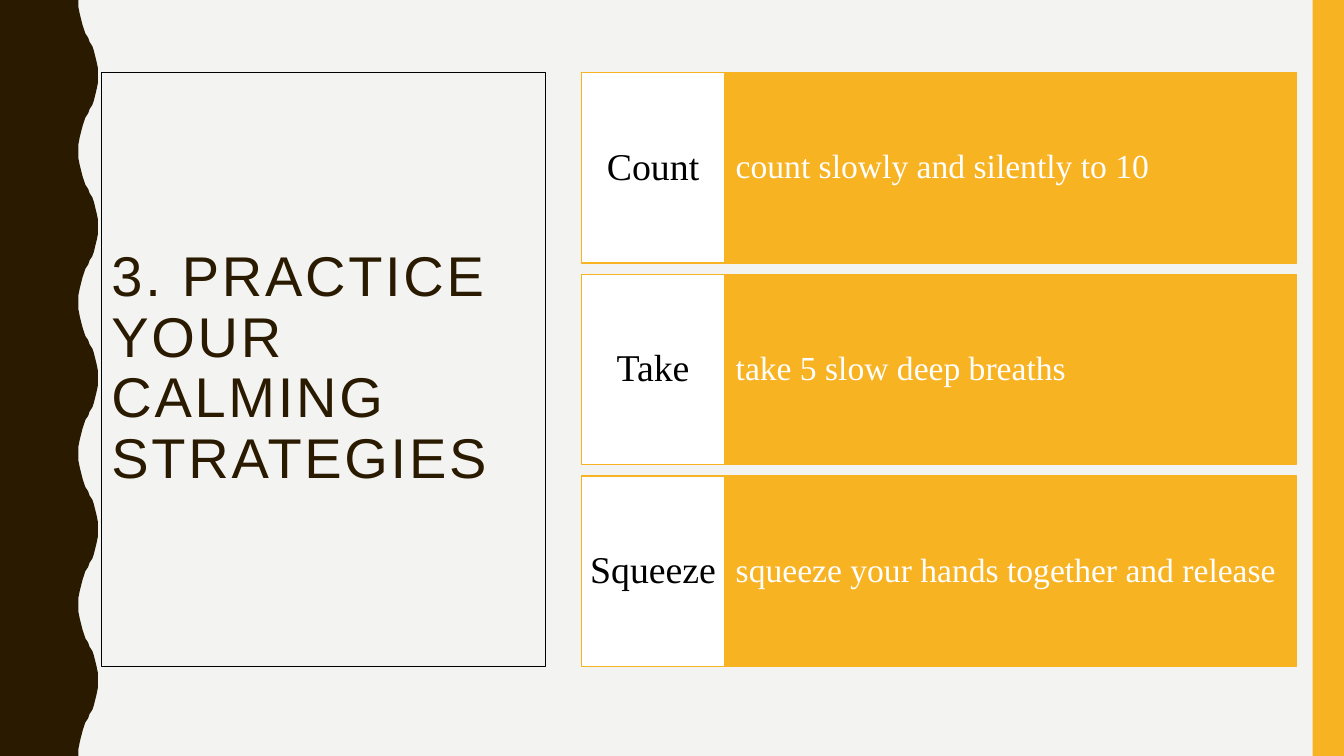
from pptx import Presentation
from pptx.dml.color import RGBColor
from pptx.enum import shapes, text
from pptx.util import Pt

TITLE = "3. PRACTICE YOUR CALMING STRATEGIES"
STEPS = [
    ("Count", "count slowly and silently to 10"),
    ("Take", "take 5 slow deep breaths"),
    ("Squeeze", "squeeze your hands together and release"),
]
DARK, GOLD, PALE, WHITE, BLACK = "2A1A00", "F8B323", "F3F3F2", "FFFFFF", "000000"
SERIF = "Times New Roman"
WIDE, HIGH = 960, 540

# Edge of the wave from a trough to the next crest, as (x, y)
RISE = [(56.2, 0), (56.4, 5), (57, 10), (57.7, 14.4), (58.6, 18),
        (59.8, 21), (61.2, 24), (62.6, 27), (64.1, 30), (65.5, 33),
        (67, 36), (68.2, 39.6), (69.1, 44), (69.7, 49), (69.8, 54)]
WAVES = 5

TOP, ROW, PITCH = 51.9, 136.1, 144
LABEL_X, LABEL_W = 415.4, 102.2
DETAIL_X, DETAIL_W = LABEL_X + LABEL_W, 408.4


def color(code):
    return RGBColor.from_string(code)


def paint(shape, fill=None, line=None, width=1):
    shape.shadow.inherit = False
    if fill:
        shape.fill.solid()
        shape.fill.fore_color.rgb = color(fill)
    else:
        shape.fill.background()
    if line:
        shape.line.color.rgb = color(line)
        shape.line.width = Pt(width)
    else:
        shape.line.fill.background()


def box(x, y, w, h, **look):
    shape = slide.shapes.add_shape(
        shapes.MSO_SHAPE.RECTANGLE, Pt(x), Pt(y), Pt(w), Pt(h))
    paint(shape, **look)
    return shape


def write(shape, words, size, ink, font=SERIF, align="LEFT", inset=7.2, track=0):
    """Fill a shape with one centred-height paragraph; track is in points."""
    frame = shape.text_frame
    frame.word_wrap = True
    frame.vertical_anchor = text.MSO_ANCHOR.MIDDLE
    frame.margin_left = frame.margin_right = Pt(inset)
    para = frame.paragraphs[0]
    para.alignment = getattr(text.PP_ALIGN, align)
    para.line_spacing = 0.9
    run = para.add_run()
    run.text = words
    run.font.size = Pt(size)
    run.font.name = font
    run.font.color.rgb = color(ink)
    if track:
        run.font._element.set("spc", str(track * 100))


def wave():
    half = RISE[-1][1]
    cycle = RISE + [(x, 2 * half - y) for x, y in RISE[-2::-1]]
    edge = [(x, y + 2 * half * n) for n in range(WAVES) for x, y in cycle]
    pen = slide.shapes.build_freeform(0, 0, scale=Pt(1))
    pen.add_line_segments(edge + [(0, HIGH)], close=True)
    paint(pen.convert_to_shape(), fill=DARK)


deck = Presentation()
deck.slide_width, deck.slide_height = Pt(WIDE), Pt(HIGH)
slide = deck.slides.add_slide(deck.slide_layouts[6])
slide.background.fill.solid()
slide.background.fill.fore_color.rgb = color(PALE)

wave()
box(937.6, 0, WIDE - 937.6, HIGH, fill=GOLD)
title = box(72.5, TOP, 317.3, 2 * PITCH + ROW, line=BLACK, width=0.75)
write(title, TITLE, 40, DARK, font="Arial", track=2)

for n, (label, detail) in enumerate(STEPS):
    y = TOP + n * PITCH
    write(box(DETAIL_X, y, DETAIL_W, ROW, fill=GOLD, line=GOLD),
          detail, 24, WHITE, inset=7.9)
    write(box(LABEL_X, y, LABEL_W, ROW, fill=WHITE, line=GOLD),
          label, 27, BLACK, align="CENTER", inset=5)

deck.save("out.pptx")
